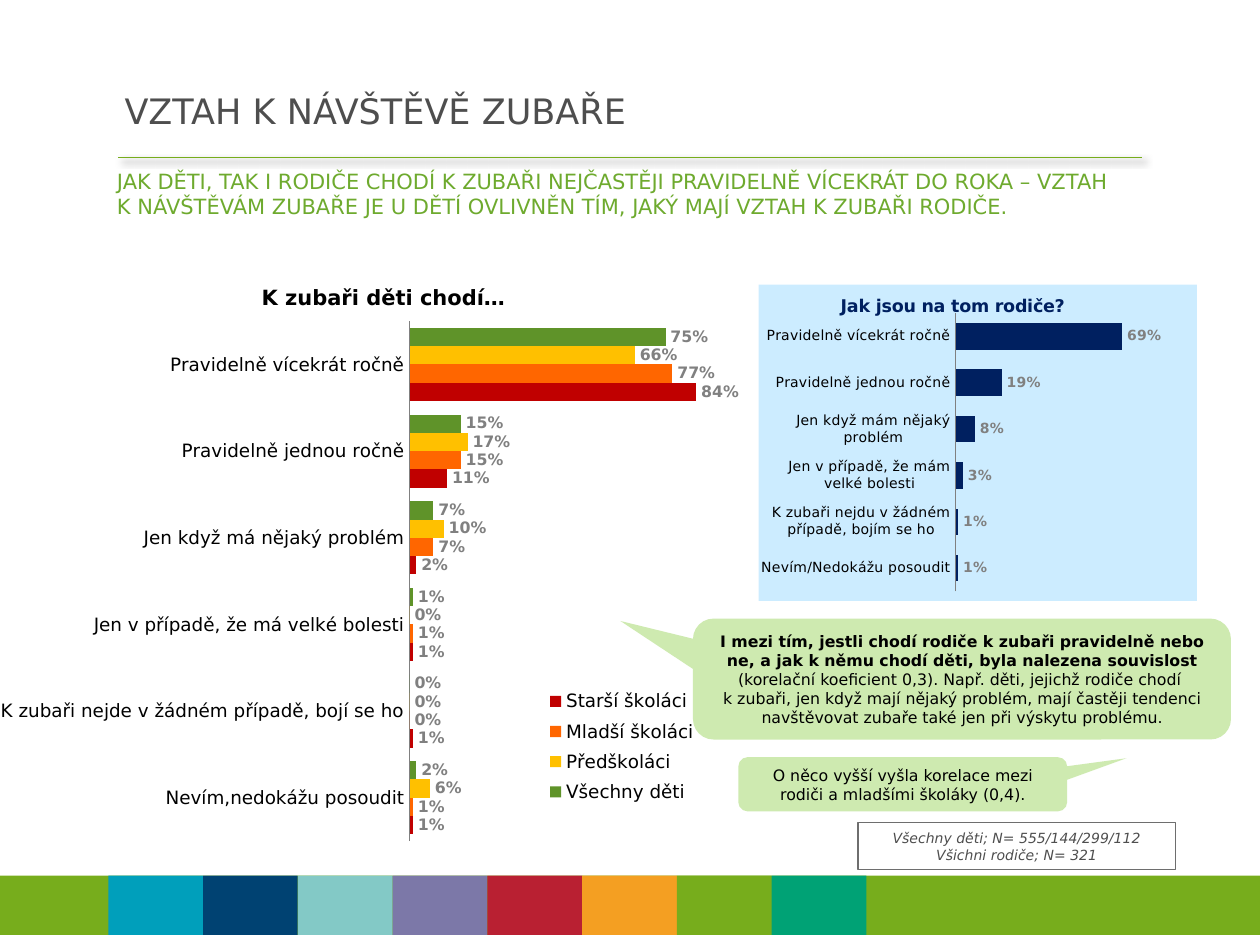
from dataclasses import dataclass
from typing import Optional

from pptx import Presentation
from pptx.chart.data import CategoryChartData
from pptx.dml.color import RGBColor
from pptx.enum.chart import XL_CHART_TYPE, XL_LABEL_POSITION, XL_LEGEND_POSITION, XL_TICK_MARK
from pptx.enum.shapes import MSO_CONNECTOR, MSO_SHAPE
from pptx.enum.text import MSO_ANCHOR, PP_ALIGN
from pptx.oxml import parse_xml
from pptx.oxml.ns import nsdecls
from pptx.util import Inches, Pt

BAR = XL_CHART_TYPE.BAR_CLUSTERED
OUTSIDE = XL_LABEL_POSITION.OUTSIDE_END
LEGEND_RIGHT = XL_LEGEND_POSITION.RIGHT
NO_TICKS = XL_TICK_MARK.NONE
STRAIGHT = MSO_CONNECTOR.STRAIGHT
RECT = MSO_SHAPE.RECTANGLE
CALLOUT = MSO_SHAPE.ROUNDED_RECTANGULAR_CALLOUT
TOP, MIDDLE = MSO_ANCHOR.TOP, MSO_ANCHOR.MIDDLE
LEFT, CENTER = PP_ALIGN.LEFT, PP_ALIGN.CENTER

FONT = "DejaVu Sans"
BLACK = RGBColor(0x00, 0x00, 0x00)
DARK_GREY = RGBColor(0x4E, 0x4E, 0x4E)
BORDER_GREY = RGBColor(0x6E, 0x6E, 0x6E)
LABEL_GREY = RGBColor(0x80, 0x80, 0x80)
BRAND_GREEN = RGBColor(0x77, 0xAD, 0x1C)
HEADLINE_GREEN = RGBColor(0x6E, 0xAA, 0x2E)
CALLOUT_GREEN = RGBColor(0xCE, 0xEA, 0xB0)
NAVY = RGBColor(0x00, 0x20, 0x60)
PALE_BLUE = RGBColor(0xCC, 0xEC, 0xFF)
GREEN = RGBColor(0x5F, 0x93, 0x29)
YELLOW = RGBColor(0xFF, 0xC0, 0x00)
ORANGE = RGBColor(0xFF, 0x66, 0x00)
RED = RGBColor(0xC0, 0x00, 0x00)
STRIPES = [RGBColor.from_string(code) for code in (
    "009FBB", "004272", "83C9C6", "7C78A8", "B92032", "F49F22", "77AD1C", "00A275")]


@dataclass
class Run:
    text: str
    size: float
    color: RGBColor = BLACK
    bold: bool = False
    italic: bool = False


@dataclass
class Answers:
    name: str
    values: tuple
    color: RGBColor


@dataclass
class BarChart:
    box: tuple
    title: Run
    title_corner: tuple
    categories: tuple
    series: list
    plot: tuple
    axis_size: float
    label_size: float
    legend: Optional[tuple] = None
    fill: Optional[RGBColor] = None


def style(font, size, color=BLACK, bold=False, italic=False):
    formats = {"name": FONT, "size": Pt(size), "bold": bold, "italic": italic}
    for attribute, value in formats.items():
        setattr(font, attribute, value)
    font.color.rgb = color


def write(shape, paragraphs: list, align=CENTER, anchor=MIDDLE):
    """Fill a shape with paragraphs, each a list of runs; newlines become line breaks."""
    frame = shape.text_frame
    frame.word_wrap = True
    frame.vertical_anchor = anchor
    for number, runs in enumerate(paragraphs):
        paragraph = frame.add_paragraph() if number else frame.paragraphs[0]
        paragraph.alignment = align
        for run in runs:
            for row, text in enumerate(run.text.split("\n")):
                if row:
                    paragraph.add_line_break()
                piece = paragraph.add_run()
                piece.text = text
                style(piece.font, run.size, run.color, run.bold, run.italic)


def add_box(slide, box: tuple, kind=RECT, fill=None, border=None, adjustments=()):
    shape = slide.shapes.add_shape(kind, *map(Inches, box))
    shape.shadow.inherit = False
    if fill is None:
        shape.fill.background()
    else:
        shape.fill.solid()
        shape.fill.fore_color.rgb = fill
    if border is None:
        shape.line.fill.background()
    else:
        shape.line.color.rgb = border
        shape.line.width = Pt(0.75)
    for number, value in enumerate(adjustments):
        shape.adjustments[number] = value
    return shape


def add_textbox(slide, box: tuple, run: Run, anchor):
    write(slide.shapes.add_textbox(*map(Inches, box)), [[run]], LEFT, anchor)


def add_rule(slide):
    """Draw the green line under the title, with its soft shadow."""
    rule = slide.shapes.add_connector(
        STRAIGHT, Inches(0.94), Inches(1.25), Inches(9.06), Inches(1.25))
    rule.line.color.rgb = BRAND_GREEN
    rule.line.width = Pt(0.75)
    rule.element.spPr.append(parse_xml(
        f'<a:effectLst {nsdecls("a")}><a:outerShdw blurRad="{Pt(4)}" dist="{Pt(3)}" '
        'dir="2700000" rotWithShape="0"><a:srgbClr val="000000"><a:alpha val="40000"/>'
        '</a:srgbClr></a:outerShdw></a:effectLst>'))


def place(chart, part: str, index: int, fractions: tuple, target=""):
    """Give a chart part a manual layout, in fractions of the chart."""
    element = chart.element.xpath(f"c:chart/c:{part}")[0]
    for old in element.xpath("c:layout"):
        element.remove(old)
    inner = f'<c:layoutTarget val="{target}"/>' if target else ""
    modes = "".join(f'<c:{axis}Mode val="edge"/>' for axis in "xy")
    sizes = "".join(f'<c:{key} val="{value}"/>' for key, value in zip("xywh", fractions))
    element.insert(index, parse_xml(
        f'<c:layout {nsdecls("c")}><c:manualLayout>{inner}{modes}{sizes}'
        '</c:manualLayout></c:layout>'))


def add_bar_chart(slide, bars: BarChart):
    data = CategoryChartData(number_format="0%")
    data.categories = bars.categories
    for answers in bars.series:
        data.add_series(answers.name, answers.values)
    chart = slide.shapes.add_chart(BAR, *map(Inches, bars.box), data).chart
    style(chart.font, 18)
    chart.has_title = True
    write(chart.chart_title, [[bars.title]])
    place(chart, "title", 1, bars.title_corner)
    place(chart, "plotArea", 0, bars.plot, "inner")

    categories, values = chart.category_axis, chart.value_axis
    formats = {"reverse_order": True, "major_tick_mark": NO_TICKS,
               "minor_tick_mark": NO_TICKS, "has_major_gridlines": False}
    for attribute, value in formats.items():
        setattr(categories, attribute, value)
    style(categories.tick_labels.font, bars.axis_size)
    categories.format.line.color.rgb = LABEL_GREY
    formats = {"minimum_scale": 0, "maximum_scale": 1,
               "has_major_gridlines": False, "visible": False}
    for attribute, value in formats.items():
        setattr(values, attribute, value)

    plot = chart.plots[0]
    formats = {"gap_width": 75, "overlap": 0, "vary_by_categories": False}
    for attribute, value in formats.items():
        setattr(plot, attribute, value)
    label_formats = {"show_value": True, "number_format": "0%",
                     "number_format_is_linked": False, "position": OUTSIDE}
    for series, answers in zip(plot.series, bars.series):
        series.format.fill.solid()
        series.format.fill.fore_color.rgb = answers.color
        for attribute, value in label_formats.items():
            setattr(series.data_labels, attribute, value)
        style(series.data_labels.font, bars.label_size, LABEL_GREY, bold=True)

    chart.has_legend = bars.legend is not None
    if bars.legend:
        chart.legend.position = LEGEND_RIGHT
        chart.legend.include_in_layout = False
        style(chart.legend.font, bars.axis_size)
        place(chart, "legend", 1, bars.legend)
    if bars.fill is not None:
        chart.element.xpath("c:txPr")[0].addprevious(parse_xml(
            f'<c:spPr {nsdecls("c", "a")}><a:solidFill><a:srgbClr val="{bars.fill}"/>'
            '</a:solidFill><a:ln><a:noFill/></a:ln></c:spPr>'))


CHILDREN = BarChart(
    (0, 2.08, 6.02, 4.69), Run("K zubaři děti chodí…", 12, bold=True), (0.34, 0.03),
    ("Pravidelně vícekrát ročně", "Pravidelně jednou ročně", "Jen když má nějaký problém",
     "Jen v případě, že má velké bolesti", "K zubaři nejde v žádném případě, bojí se ho",
     "Nevím,nedokážu posoudit"),
    [Answers("Všechny děti", (0.75, 0.15, 0.07, 0.01, 0, 0.02), GREEN),
     Answers("Předškoláci", (0.66, 0.17, 0.1, 0, 0, 0.06), YELLOW),
     Answers("Mladší školáci", (0.77, 0.15, 0.07, 0.01, 0, 0.01), ORANGE),
     Answers("Starší školáci", (0.84, 0.11, 0.02, 0.01, 0.01, 0.01), RED)],
    (0.54, 0.1, 0.45, 0.88), 10.5, 9, legend=(0.72, 0.71, 0.2, 0.22))
PARENTS = BarChart(
    (6.02, 2.26, 3.48, 2.51), Run("Jak jsou na tom rodiče?", 10, NAVY, bold=True), (0.18, 0.02),
    ("Pravidelně vícekrát ročně", "Pravidelně jednou ročně", "Jen když mám nějaký problém",
     "Jen v případě, že mám velké bolesti", "K zubaři nejdu v žádném případě, bojím se ho",
     "Nevím/Nedokážu posoudit"),
    [Answers("Series 1", (0.69, 0.19, 0.08, 0.03, 0.01, 0.01), NAVY)],
    (0.45, 0.09, 0.55, 0.88), 8, 8, fill=PALE_BLUE)


def main():
    deck = Presentation()
    deck.slide_width, deck.slide_height = Inches(10), Inches(7.5)
    slide = deck.slides.add_slide(deck.slide_layouts[6])

    add_rule(slide)
    add_box(slide, (0, 6.95, 10, 0.47), fill=BRAND_GREEN)
    for number, color in enumerate(STRIPES):
        add_box(slide, (0.86 + number * 0.752, 6.95, 0.752, 0.47), fill=color)

    add_textbox(slide, (0.89, 0.62, 8.87, 0.51),
                Run("VZTAH K NÁVŠTĚVĚ ZUBAŘE", 20, DARK_GREY), MIDDLE)
    add_textbox(slide, (0.83, 1.29, 8.82, 0.55), Run(
        "JAK DĚTI, TAK I RODIČE CHODÍ K ZUBAŘI NEJČASTĚJI PRAVIDELNĚ VÍCEKRÁT DO ROKA – VZTAH \n"
        "K NÁVŠTĚVÁM ZUBAŘE JE U DĚTÍ OVLIVNĚN TÍM, JAKÝ MAJÍ VZTAH K ZUBAŘI RODIČE.",
        12, HEADLINE_GREEN), TOP)

    add_bar_chart(slide, CHILDREN)
    add_bar_chart(slide, PARENTS)

    correlation = add_box(slide, (5.5, 4.91, 4.27, 0.96), CALLOUT, CALLOUT_GREEN,
                          adjustments=(-0.635, -0.48, 0.17))
    write(correlation, [[
        Run("I mezi tím, jestli chodí rodiče k zubaři pravidelně nebo ne, a jak k němu chodí děti, "
            "byla nalezena souvislost ", 9, bold=True),
        Run("(korelační koeficient 0,3). Např. děti, jejichž rodiče chodí \nk zubaři, jen když mají "
            "nějaký problém, mají častěji tendenci navštěvovat zubaře také jen při výskytu "
            "problému.", 9)]])
    sample = add_box(slide, (6.81, 6.53, 2.52, 0.37), border=BORDER_GREY)
    write(sample, [[Run(text, 8, DARK_GREY, italic=True)] for text in (
        "Všechny děti; N= 555/144/299/112", "Všichni rodiče; N= 321")])
    younger = add_box(slide, (5.86, 6.01, 2.61, 0.43), CALLOUT, CALLOUT_GREEN,
                      adjustments=(0.68, -0.48, 0.17))
    write(younger, [[Run(
        "O něco vyšší vyšla korelace mezi rodiči a mladšími školáky (0,4).", 9)]])

    deck.save("out.pptx")


if __name__ == "__main__":
    main()
